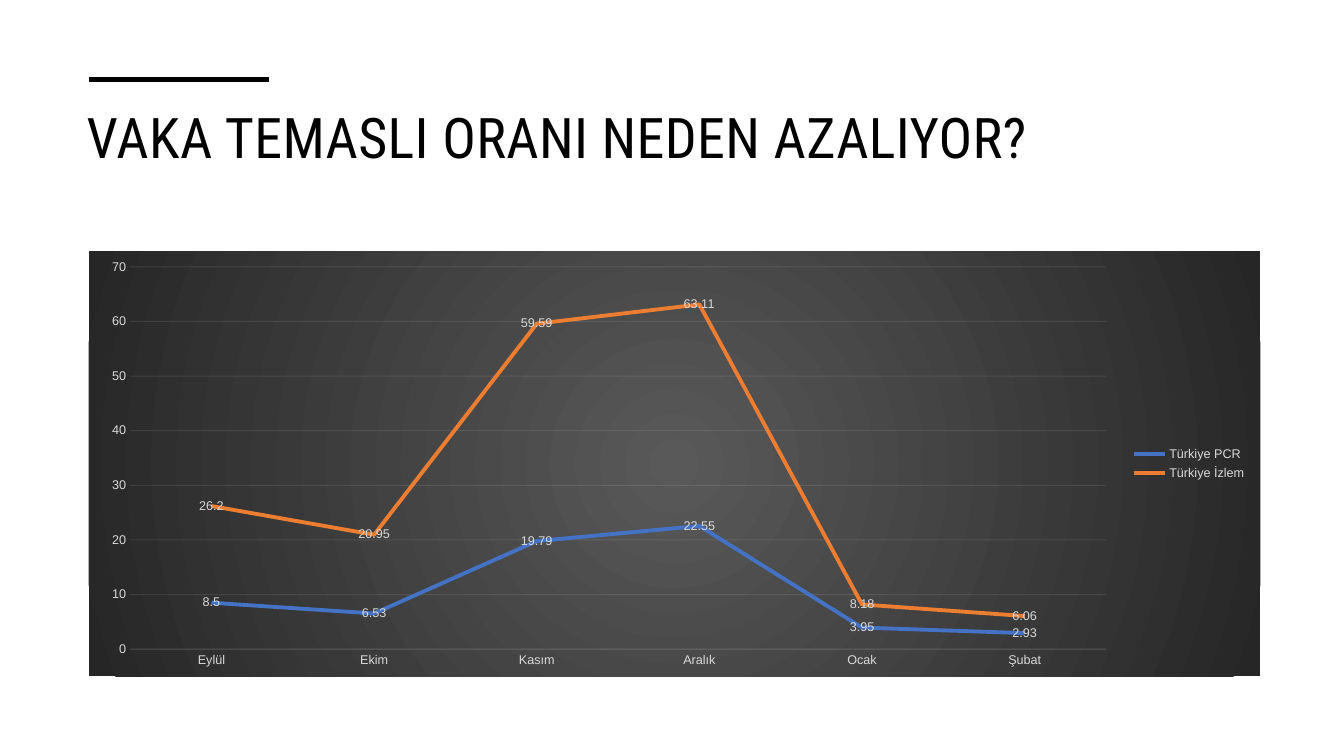
from lxml.etree import SubElement
from pptx import Presentation
from pptx.chart.data import CategoryChartData
from pptx.dml.color import RGBColor
from pptx.enum.chart import XL_CHART_TYPE as ChartType
from pptx.enum.chart import XL_LABEL_POSITION as LabelPosition
from pptx.enum.chart import XL_LEGEND_POSITION as LegendPosition
from pptx.enum.chart import XL_TICK_MARK as TickMark
from pptx.enum.text import MSO_ANCHOR, MSO_AUTO_SIZE, PP_ALIGN
from pptx.oxml import parse_xml
from pptx.oxml.ns import nsdecls, qn
from pptx.util import Inches, Pt

BLACK = RGBColor(0x00, 0x00, 0x00)
WHITE = RGBColor(0xFF, 0xFF, 0xFF)
LABEL_GRAY = RGBColor(0xD9, 0xD9, 0xD9)
GRID_GRAY = RGBColor(0xF2, 0xF2, 0xF2)
BLUE = RGBColor(0x44, 0x72, 0xC4)
ORANGE = RGBColor(0xED, 0x7D, 0x31)
CHART_CENTER = RGBColor(0x59, 0x59, 0x59)
CHART_EDGE = RGBColor(0x26, 0x26, 0x26)

MONTHS = ["Eylül", "Ekim", "Kasım", "Aralık", "Ocak", "Şubat"]
SERIES = [
    ("Türkiye PCR ", [8.5, 6.53, 19.79, 22.55, 3.95, 2.93], BLUE),
    ("Türkiye İzlem ", [26.2, 20.95, 59.59, 63.11, 8.18, 6.06], ORANGE),
]


class SlideBuilder:
    title_font = "Roboto Condensed"
    chart_font = "Arial"

    def __init__(self, presentation):
        self.slide = presentation.slides.add_slide(presentation.slide_layouts[5])
        self.slide.background.fill.solid()
        self.slide.background.fill.fore_color.rgb = WHITE

    def add_title(self, text, left, top, width, height):
        title = self.slide.shapes.title
        title.left, title.top = Inches(left), Inches(top)
        title.width, title.height = Inches(width), Inches(height)
        frame = title.text_frame
        frame.text = text
        frame.word_wrap = True
        frame.auto_size = MSO_AUTO_SIZE.NONE
        frame.vertical_anchor = MSO_ANCHOR.TOP
        paragraph = frame.paragraphs[0]
        paragraph.alignment = PP_ALIGN.LEFT
        self.style_font(paragraph.font, self.title_font, 40, BLACK)
        # Letter spacing, in hundredths of a point
        paragraph.runs[0].font._element.set("spc", "30")

    def add_rule(self, left, right, y, weight):
        rule = self.slide.shapes.add_connector(
            1, Inches(left), Inches(y), Inches(right), Inches(y))
        rule.line.color.rgb = BLACK
        rule.line.width = Pt(weight)
        SubElement(rule._element.spPr, qn("a:effectLst"))

    def add_line_chart(self, categories, series_rows, left, top, width, height):
        data = CategoryChartData()
        data.categories = categories
        for name, values, _ in series_rows:
            data.add_series(name, values)
        chart = self.slide.shapes.add_chart(
            ChartType.LINE, Inches(left), Inches(top),
            Inches(width), Inches(height), data).chart
        chart.has_title = False
        self.style_font(chart.font, self.chart_font, 10, BLACK)
        self.fill_radial(chart, CHART_CENTER, CHART_EDGE)
        self.style_axes(chart)

        chart.has_legend = True
        chart.legend.position = LegendPosition.RIGHT
        chart.legend.include_in_layout = False
        self.style_font(chart.legend.font, self.chart_font, 9, LABEL_GRAY)

        chart.plots[0].vary_by_categories = False
        for series, (_, _, color) in zip(chart.plots[0].series, series_rows):
            self.style_series(series, color)

    def style_axes(self, chart):
        for axis in (chart.category_axis, chart.value_axis):
            axis.major_tick_mark = axis.minor_tick_mark = TickMark.NONE
            self.style_font(axis.tick_labels.font, self.chart_font, 9, LABEL_GRAY)
        self.style_faint_line(chart.category_axis.format.line)
        value_axis = chart.value_axis
        value_axis.minimum_scale, value_axis.maximum_scale = 0, 70
        value_axis.major_unit = 10
        value_axis.format.line.fill.background()
        value_axis.has_major_gridlines = True
        self.style_faint_line(value_axis.major_gridlines.format.line)

    def style_series(self, series, color):
        series.smooth = False
        series.format.line.color.rgb = color
        series.format.line.width = Pt(2.75)
        labels = series.data_labels
        labels.show_value = True
        labels.position = LabelPosition.CENTER
        self.style_font(labels.font, self.chart_font, 9, LABEL_GRAY)

    @staticmethod
    def style_font(font, name, size, color):
        font.name = name
        font.size = Pt(size)
        font.bold = False
        font.color.rgb = color

    @staticmethod
    def style_faint_line(line):
        line.color.rgb = GRID_GRAY
        line.width = Pt(0.75)
        color = line._ln.find(".//" + qn("a:srgbClr"))
        SubElement(color, qn("a:alpha")).set("val", "10000")

    @staticmethod
    def fill_radial(chart, center, edge):
        properties = parse_xml(
            f'<c:spPr {nsdecls("c", "a")}><a:gradFill><a:gsLst>'
            f'<a:gs pos="0"><a:srgbClr val="{center}"/></a:gs>'
            f'<a:gs pos="100000"><a:srgbClr val="{edge}"/></a:gs></a:gsLst>'
            '<a:path path="circle"><a:fillToRect l="50000" t="50000" '
            'r="50000" b="50000"/></a:path></a:gradFill>'
            '<a:ln><a:noFill/></a:ln></c:spPr>')
        chart._chartSpace.find(qn("c:chart")).addnext(properties)


def main():
    presentation = Presentation()
    presentation.slide_width = Inches(13.33)
    presentation.slide_height = Inches(7.5)
    builder = SlideBuilder(presentation)

    # Heading
    builder.add_title("VAKA TEMASLI ORANI NEDEN AZALIYOR?", 0.76, 0.97, 11.81, 1.15)
    builder.add_rule(0.88, 2.67, 0.79, 3.5)

    # Monthly rates
    builder.add_line_chart(MONTHS, SERIES, 0.88, 2.49, 11.62, 4.22)

    presentation.save("out.pptx")


if __name__ == "__main__":
    main()
